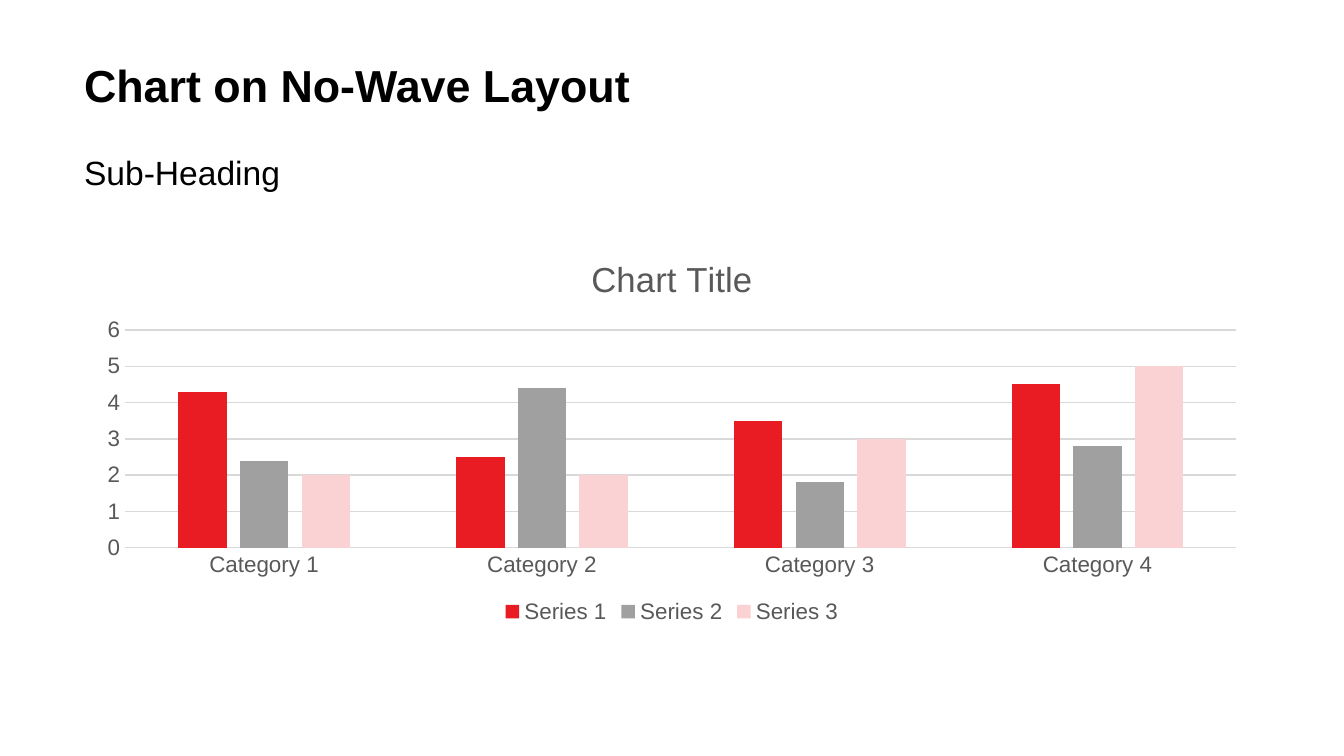
"""Build a slide with a heading, a sub-heading and a clustered column chart."""
from pptx import Presentation
from pptx.chart import data
from pptx.dml.color import RGBColor
from pptx.enum import chart as ch, text
from pptx.util import Pt

BLACK = RGBColor(0x00, 0x00, 0x00)
GREY_TEXT = RGBColor(0x59, 0x59, 0x59)
GRID = RGBColor(0xD9, 0xD9, 0xD9)
RED = RGBColor(0xE9, 0x1C, 0x24)
GREY = RGBColor(0xA0, 0xA0, 0xA0)
PINK = RGBColor(0xFB, 0xD2, 0xD3)
FONT = "Arial"

LEFT, WIDTH = 45, 630
HEADINGS = [
    ("Chart on No-Wave Layout", 34, 50, 24, True),
    ("Sub-Heading", 84, 34, 18, False),
]
CHART_TITLE = "Chart Title"
CHART_TOP, CHART_HEIGHT = 126, 211
CATEGORIES = ["Category 1", "Category 2", "Category 3", "Category 4"]
SERIES = [
    ("Series 1", (4.3, 2.5, 3.5, 4.5), RED),
    ("Series 2", (2.4, 4.4, 1.8, 2.8), GREY),
    ("Series 3", (2, 2, 3, 5), PINK),
]


def style(font, size, color, bold=False):
    font.name, font.size, font.bold = FONT, Pt(size), bold
    font.color.rgb = color


def rule(line):
    line.color.rgb = GRID
    line.width = Pt(0.75)


def add_heading(s, content, top, height, size, bold):
    tf = s.shapes.add_textbox(Pt(LEFT), Pt(top), Pt(WIDTH), Pt(height)).text_frame
    tf.word_wrap = True
    tf.vertical_anchor = text.MSO_ANCHOR.TOP
    tf.margin_left = tf.margin_right = tf.margin_top = tf.margin_bottom = 0
    p = tf.paragraphs[0]
    p.line_spacing = 0.9
    r = p.add_run()
    r.text = content
    style(r.font, size, BLACK, bold)


def add_column_chart(s):
    cd = data.CategoryChartData()
    cd.categories = CATEGORIES
    for name, values, _ in SERIES:
        cd.add_series(name, values)
    chart = s.shapes.add_chart(
        ch.XL_CHART_TYPE.COLUMN_CLUSTERED, Pt(LEFT), Pt(CHART_TOP),
        Pt(WIDTH), Pt(CHART_HEIGHT), cd).chart
    style(chart.font, 10, BLACK)

    chart.has_title = True
    r = chart.chart_title.text_frame.paragraphs[0].add_run()
    r.text = CHART_TITLE
    style(r.font, 18.6, GREY_TEXT)
    chart.chart_title.include_in_layout = False

    chart.has_legend = True
    chart.legend.position = ch.XL_LEGEND_POSITION.BOTTOM
    chart.legend.include_in_layout = False
    style(chart.legend.font, 12, GREY_TEXT)

    for axis in (chart.category_axis, chart.value_axis):
        axis.major_tick_mark = axis.minor_tick_mark = ch.XL_TICK_MARK.NONE
        style(axis.tick_labels.font, 12, GREY_TEXT)
    rule(chart.category_axis.format.line)
    chart.value_axis.format.line.fill.background()
    chart.value_axis.has_major_gridlines = True
    rule(chart.value_axis.major_gridlines.format.line)

    plot = chart.plots[0]
    plot.gap_width, plot.overlap = 219, -27
    plot.vary_by_categories = False
    for series, (_, _, color) in zip(plot.series, SERIES):
        series.invert_if_negative = False
        series.format.fill.solid()
        series.format.fill.fore_color.rgb = color


def main():
    prs = Presentation()
    prs.slide_width, prs.slide_height = Pt(720), Pt(405)
    s = prs.slides.add_slide(prs.slide_layouts[6])
    for heading in HEADINGS:
        add_heading(s, *heading)
    add_column_chart(s)
    prs.save("out.pptx")


if __name__ == "__main__":
    main()
